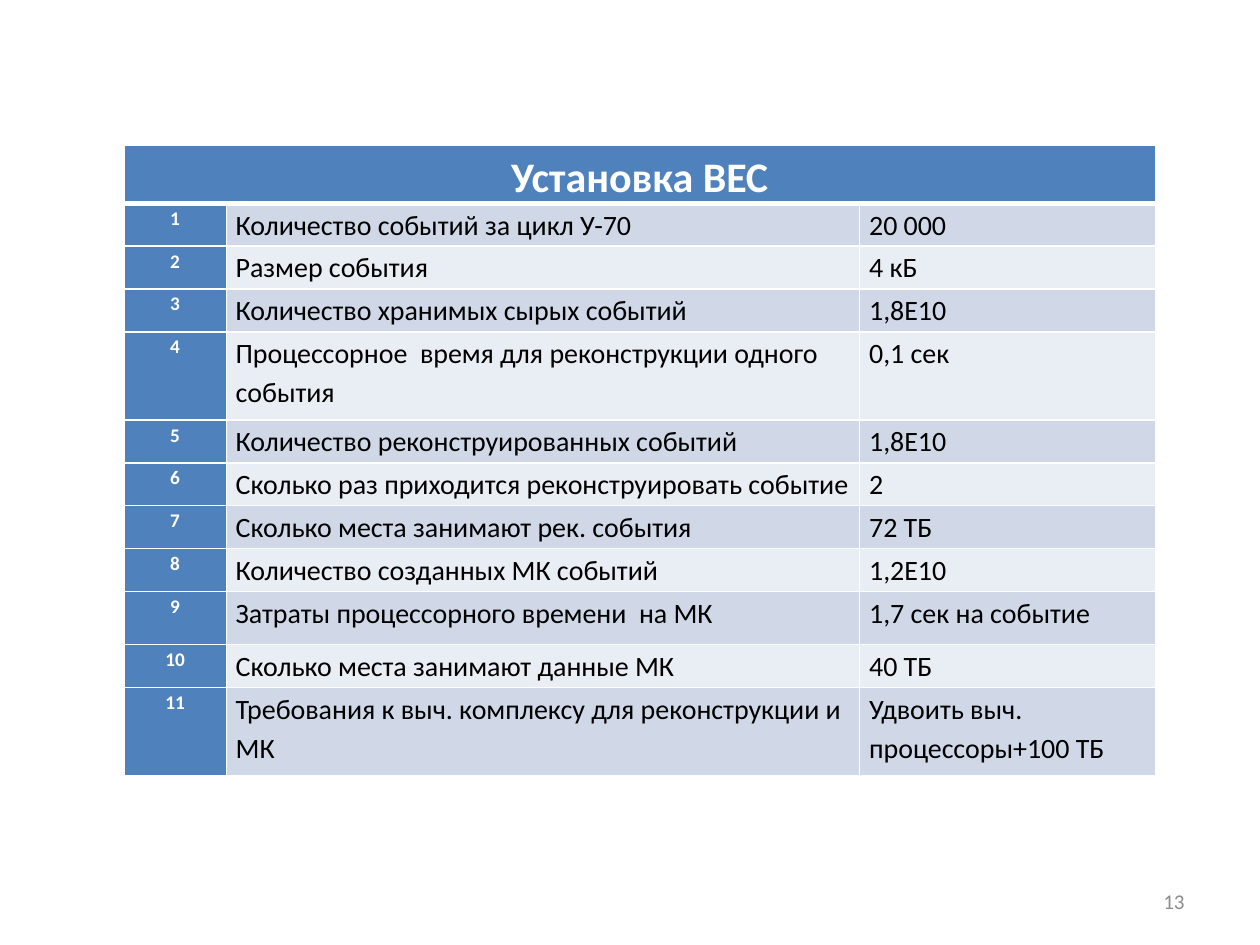
from dataclasses import dataclass

from lxml import etree
from pptx import Presentation
from pptx.dml.color import RGBColor
from pptx.enum.text import MSO_ANCHOR, PP_ALIGN
from pptx.oxml.ns import qn
from pptx.util import Pt


@dataclass(frozen=True)
class Theme:
    font: str = "Calibri"
    accent: str = "4F81BD"
    bands: tuple = ("D0D8E8", "E9EDF4")
    light: str = "FFFFFF"
    dark: str = "000000"
    muted: str = "8C8C8C"
    heading_size: int = 24
    body_size: int = 16
    footer_size: int = 12
    index_size: int = 11
    line_spacing: float = 1.15
    rule: int = 1
    heading_rule: int = 3


THEME = Theme()
HEADING = "Установка ВЕС"
PARAMETERS = [
    ("Количество событий за цикл У-70", "20 000"),
    ("Размер события", "4 кБ"),
    ("Количество хранимых сырых событий", "1,8E10"),
    ("Процессорное  время для реконструкции одного события", "0,1 сек"),
    ("Количество реконструированных событий", "1,8E10"),
    ("Сколько раз приходится реконструировать событие", "2"),
    ("Сколько места занимают рек. события", "72 ТБ"),
    ("Количество созданных МК событий", "1,2E10"),
    ("Затраты процессорного времени  на МК", "1,7 сек на событие"),
    ("Сколько места занимают данные МК", "40 ТБ"),
    ("Требования к выч. комплексу для реконструкции и МК",
     "Удвоить выч. процессоры+100 ТБ"),
]
COLUMN_WIDTHS = (58.5, 362, 169)
ROW_HEIGHT = 24.5
TALL_ROWS = {4: 50.4, 9: 30.4, 11: 50.4}


def write(frame, text, size, color, bold=False, align=PP_ALIGN.LEFT):
    frame.text = text
    paragraph = frame.paragraphs[0]
    paragraph.alignment = align
    font = paragraph.runs[0].font
    font.name, font.size, font.bold = THEME.font, Pt(size), bold
    font.color.rgb = RGBColor.from_string(color)
    return paragraph


def draw_borders(cell, top, bottom):
    """Rule all four sides of a cell; top and bottom are line widths."""
    properties = cell._tc.get_or_add_tcPr()
    sides = {"lnL": THEME.rule, "lnR": THEME.rule, "lnT": top, "lnB": bottom}
    for side, width in sides.items():
        line = etree.SubElement(properties, qn(f"a:{side}"), w=str(Pt(width)))
        fill = etree.SubElement(line, qn("a:solidFill"))
        etree.SubElement(fill, qn("a:srgbClr"), val=THEME.light)


def style_cell(cell, row, fill):
    draw_borders(cell,
                 top=THEME.heading_rule if row == 1 else THEME.rule,
                 bottom=THEME.heading_rule if row == 0 else THEME.rule)
    cell.fill.solid()
    cell.fill.fore_color.rgb = RGBColor.from_string(fill)
    cell.margin_left = cell.margin_right = Pt(5.4)
    cell.margin_top = cell.margin_bottom = Pt(0)


def write_cell(cell, text, size, color, **style):
    paragraph = write(cell.text_frame, text, size, color, **style)
    paragraph.line_spacing = THEME.line_spacing


def add_parameter_table(slide):
    heights = [TALL_ROWS.get(row, ROW_HEIGHT)
               for row in range(len(PARAMETERS) + 1)]
    table = slide.shapes.add_table(
        len(heights), len(COLUMN_WIDTHS), Pt(70.8), Pt(83),
        Pt(sum(COLUMN_WIDTHS)), Pt(sum(heights))).table
    for column, width in zip(table.columns, COLUMN_WIDTHS):
        column.width = Pt(width)
    for row, height in zip(table.rows, heights):
        row.height = Pt(height)

    label_style = dict(color=THEME.light, bold=True, align=PP_ALIGN.CENTER)
    for cell in table.rows[0].cells:
        style_cell(cell, 0, THEME.accent)
    table.cell(0, 0).merge(table.cell(0, len(COLUMN_WIDTHS) - 1))
    write_cell(table.cell(0, 0), HEADING, THEME.heading_size, **label_style)

    for number, parameter in enumerate(PARAMETERS, start=1):
        index_cell, *parameter_cells = table.rows[number].cells
        style_cell(index_cell, number, THEME.accent)
        write_cell(index_cell, str(number), THEME.index_size, **label_style)
        band = THEME.bands[(number - 1) % 2]
        for cell, text in zip(parameter_cells, parameter):
            style_cell(cell, number, band)
            write_cell(cell, text, THEME.body_size, THEME.dark)


def add_page_number(slide, number):
    frame = slide.shapes.add_textbox(
        Pt(516), Pt(500.5), Pt(168), Pt(28.8)).text_frame
    frame.word_wrap = True
    frame.vertical_anchor = MSO_ANCHOR.MIDDLE
    write(frame, number, THEME.footer_size, THEME.muted, align=PP_ALIGN.RIGHT)


def main():
    presentation = Presentation()
    presentation.slide_width, presentation.slide_height = Pt(720), Pt(540)
    slide = presentation.slides.add_slide(presentation.slide_layouts[6])
    add_page_number(slide, "13")
    add_parameter_table(slide)
    presentation.save("out.pptx")


if __name__ == "__main__":
    main()
